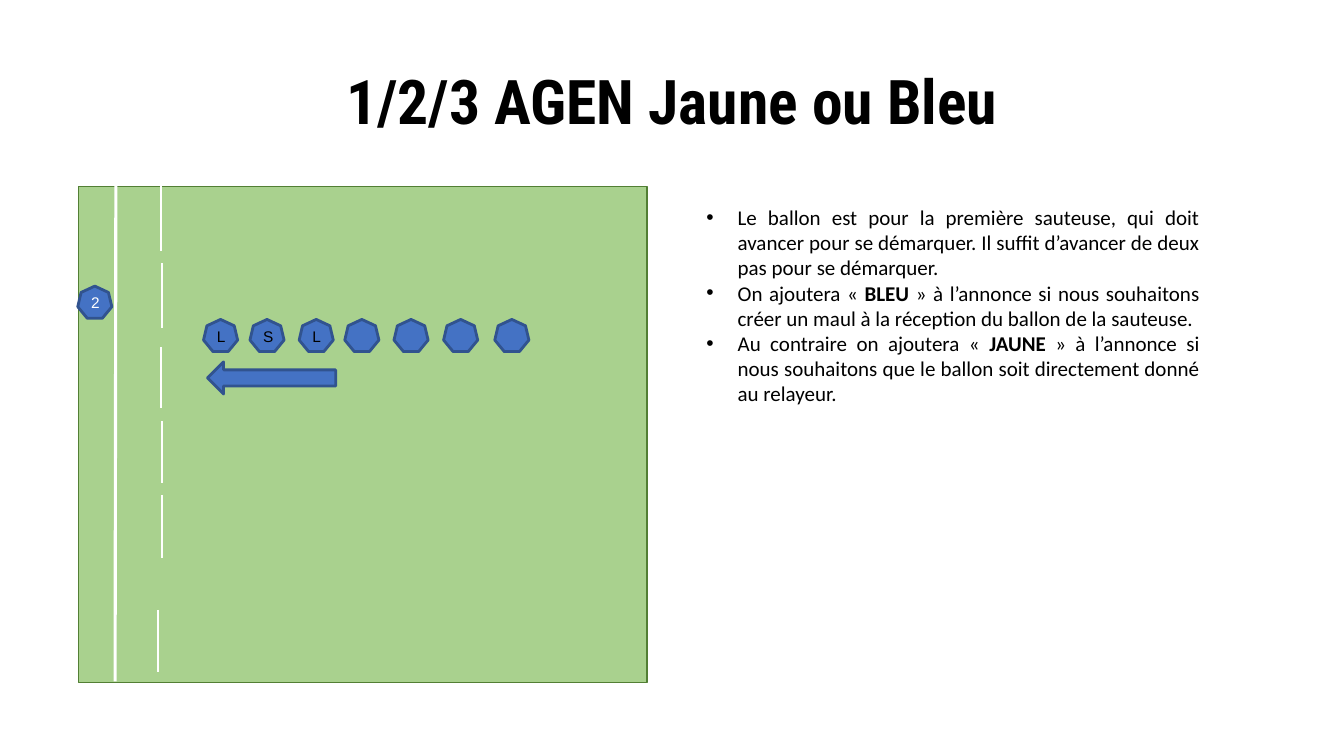
from lxml import etree
from pptx import Presentation
from pptx.dml.color import RGBColor
from pptx.enum.shapes import MSO_CONNECTOR, MSO_SHAPE
from pptx.enum.text import MSO_ANCHOR, PP_ALIGN
from pptx.oxml.ns import qn
from pptx.util import Cm, Pt

LINE = MSO_CONNECTOR.STRAIGHT
RECT = MSO_SHAPE.RECTANGLE
HEPTAGON = MSO_SHAPE.HEPTAGON
ARROW = MSO_SHAPE.LEFT_ARROW
MIDDLE = MSO_ANCHOR.MIDDLE
CENTER = PP_ALIGN.CENTER
JUSTIFY = PP_ALIGN.JUSTIFY

BLACK, WHITE = "000000", "FFFFFF"
GRASS, EDGE = "A9D18E", "527F34"
BLUE, NAVY = "4472C4", "31538F"

PLAYERS = [(3.15, "L"), (4.32, "S"), (5.56, "L"), (6.71, ""),
           (7.95, ""), (9.2, ""), (10.49, "")]
DASHES = [(2.08, -0.03, 1.62), (2.11, 1.93, 3.56), (2.08, 4.04, 5.59),
          (2.11, 5.92, 7.47), (2.11, 7.77, 9.35), (2.01, 10.67, 12.24)]
NOTES = [
    [("Le ballon est pour la première sauteuse, qui doit avancer pour se "
      "démarquer. Il suffit d’avancer de deux pas pour se démarquer.", False)],
    [("On ajoutera « ", False), ("BLEU", True),
     (" » à l’annonce si nous souhaitons créer un maul à la réception "
      "du ballon de la sauteuse.", False)],
    [("Au contraire on ajoutera « ", False), ("JAUNE", True),
     (" » à l’annonce si nous souhaitons que le ballon soit directement "
      "donné au relayeur.", False)],
]


def color(code):
    """Turn a hex string into a colour."""
    return RGBColor.from_string(code)


def add_run(para, text, font, size, code, bold=False):
    """Add one styled run to a paragraph."""
    run = para.add_run()
    run.text = text
    run.font.name = font
    run.font.size = Pt(size)
    run.font.bold = bold
    run.font.color.rgb = color(code)


def add_form(slide, kind, box, fill, edge, width):
    """Add a filled, outlined preset shape."""
    form = slide.shapes.add_shape(kind, *map(Cm, box))
    form.shadow.inherit = False
    form.fill.solid()
    form.fill.fore_color.rgb = color(fill)
    form.line.color.rgb = color(edge)
    form.line.width = Pt(width)
    return form


def add_mark(slide, start, end, width):
    """Add a white pitch marking."""
    mark = slide.shapes.add_connector(LINE, *map(Cm, start + end))
    mark.line.color.rgb = color(WHITE)
    mark.line.width = Pt(width)
    etree.SubElement(mark._element.spPr, qn("a:effectLst"))


def add_player(slide, left, top, label, code):
    """Add a heptagon player with an optional label."""
    form = add_form(slide, HEPTAGON, (left, top, 0.86, 0.81), BLUE, NAVY, 2)
    if label:
        form.text_frame.vertical_anchor = MIDDLE
        para = form.text_frame.paragraphs[0]
        para.alignment = CENTER
        para.line_spacing = 1.07
        add_run(para, label, "Arial", 11, code)


def add_title(slide, box):
    """Write the centred title in its box."""
    frame = slide.shapes.add_textbox(*map(Cm, box)).text_frame
    frame.word_wrap = True
    frame.vertical_anchor = MIDDLE
    frame.margin_left = frame.margin_right = 0
    frame.margin_top = frame.margin_bottom = 0
    para = frame.paragraphs[0]
    para.alignment = CENTER
    para.line_spacing = 0.9
    add_run(para, "1/2/3 AGEN Jaune ou Bleu", "Roboto Condensed", 44, BLACK, True)


def add_pitch(slide, box):
    """Draw the pitch, its markings, the players and the move."""
    left, top = box[:2]
    add_form(slide, RECT, box, GRASS, EDGE, 1)
    add_mark(slide, (left + 0.94, top - 0.03), (left + 0.92, top + 12.47), 2.25)
    for x, start, end in DASHES:
        add_mark(slide, (left + x, top + start), (left + x, top + end), 1.5)
    for x, label in PLAYERS:
        add_player(slide, left + x, top + 3.35, label, BLACK)
    add_player(slide, left - 0.02, top + 2.51, "2", WHITE)
    add_form(slide, ARROW, (left + 3.25, top + 4.42, 3.23, 0.81), BLUE, NAVY, 2)


def add_notes(slide, box):
    """Write the bulleted, justified instructions."""
    frame = slide.shapes.add_textbox(*map(Cm, box)).text_frame
    frame.word_wrap = True
    for i, parts in enumerate(NOTES):
        para = frame.add_paragraph() if i else frame.paragraphs[0]
        para.alignment = JUSTIFY
        props = para._p.get_or_add_pPr()
        props.set("marL", str(Cm(0.79)))
        props.set("indent", str(Cm(-0.79)))
        etree.SubElement(props, qn("a:buFont")).set("typeface", "Arial")
        etree.SubElement(props, qn("a:buChar")).set("char", "•")
        for text, bold in parts:
            add_run(para, text, "Calibri", 15, BLACK, bold)


def main():
    """Build and save the slide."""
    deck = Presentation()
    deck.slide_width, deck.slide_height = Cm(33.87), Cm(19.05)
    slide = deck.slides.add_slide(deck.slide_layouts[6])
    add_title(slide, (1.7, 1.85, 30.48, 1.57))
    add_pitch(slide, (1.98, 4.7, 14.33, 12.5))
    add_notes(slide, (17.55, 5.03, 12.93, 5.38))
    deck.save("out.pptx")


if __name__ == "__main__":
    main()
